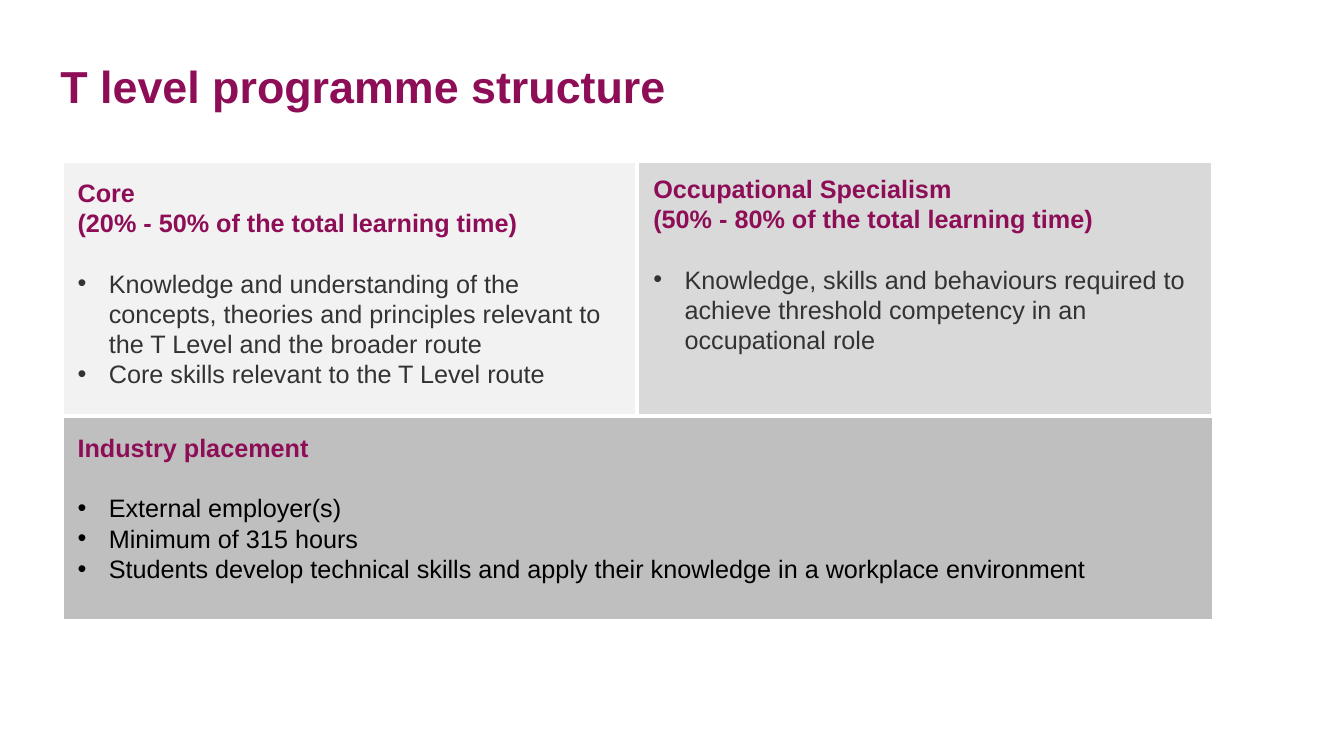
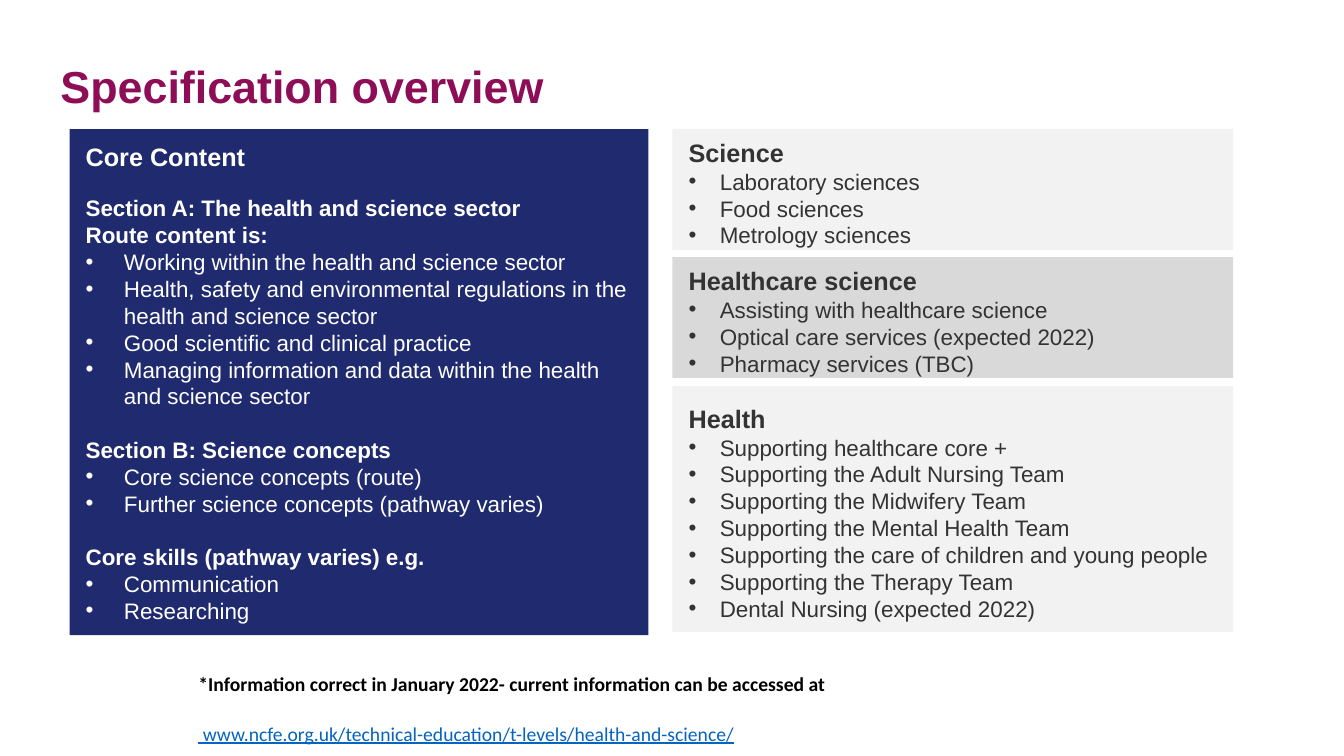
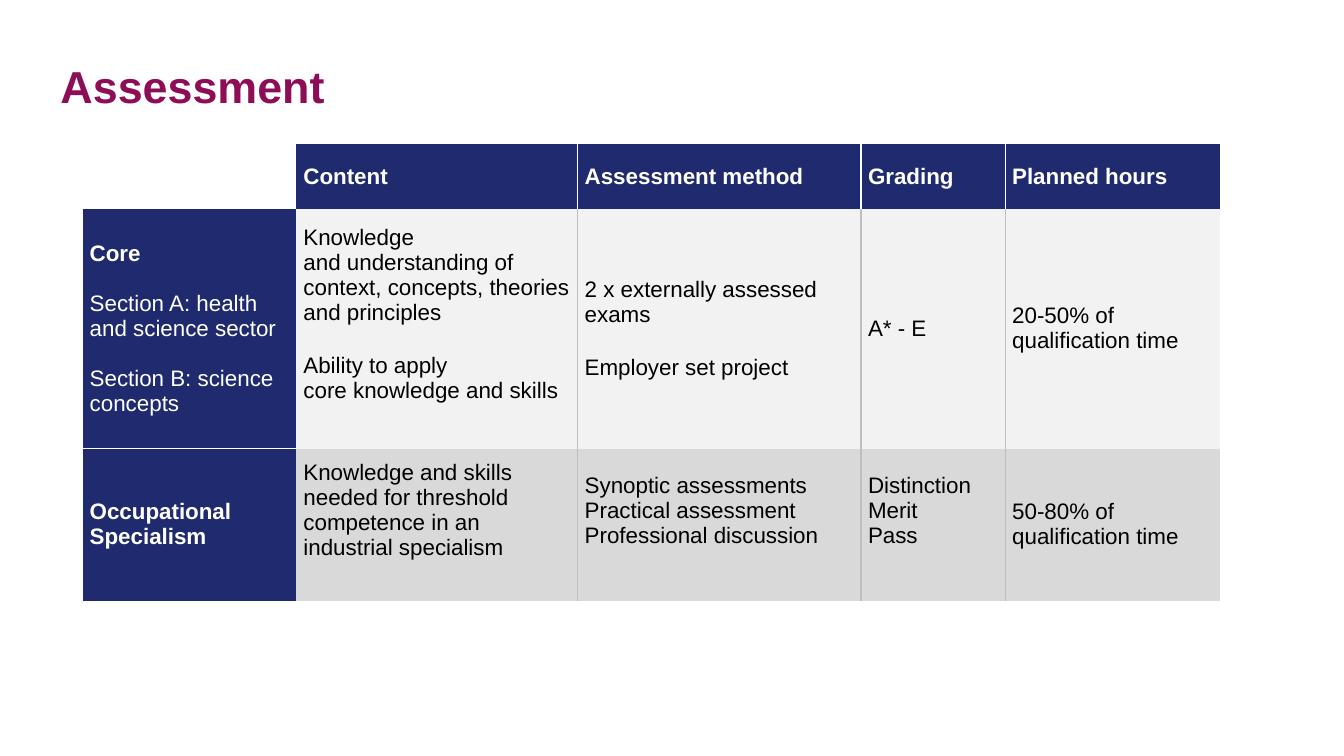
import pptx
import pptx.util
import pptx.dml.color
import pptx.enum.shapes
import pptx.enum.text
import pptx.oxml
import pptx.oxml.ns
from lxml import etree

Inches = pptx.util.Inches
Pt = pptx.util.Pt
RGBColor = pptx.dml.color.RGBColor
MSO_ANCHOR = pptx.enum.text.MSO_ANCHOR
qn = pptx.oxml.ns.qn

PLUM = RGBColor(0x8D, 0x0E, 0x57)
NAVY = RGBColor(0x20, 0x2B, 0x6F)
PALE = RGBColor(0xF2, 0xF2, 0xF2)
LIGHT = RGBColor(0xD9, 0xD9, 0xD9)
MID = RGBColor(0xBF, 0xBF, 0xBF)
DARK = RGBColor(0x33, 0x33, 0x33)
BLACK = RGBColor(0, 0, 0)
WHITE = RGBColor(0xFF, 0xFF, 0xFF)
LINK = RGBColor(0x05, 0x63, 0xC1)
NO_GRID = "{2D5ABB26-0587-4C30-8999-92F81FD0307C}"
NBSP = chr(160)


def add_text(tf, text, size=16, color=BLACK, bold=False, underline=None,
             font="Arial", spacing=1.0, gap=0, indent=0):
    p = tf.paragraphs[0]
    if p.runs:
        p = tf.add_paragraph()
    p.alignment = pptx.enum.text.PP_ALIGN.LEFT
    p.line_spacing = spacing
    p.space_before = Pt(gap)
    if indent:
        pPr = p._p.get_or_add_pPr()
        pPr.set("marL", str(Inches(indent)))
        pPr.set("indent", str(-Inches(indent)))
        etree.SubElement(pPr, qn("a:buFont"), typeface="Arial")
        etree.SubElement(pPr, qn("a:buChar"), char="•")
    r = p.add_run()
    r.text = text
    r.font.name = font
    r.font.size = Pt(size)
    r.font.bold = bold
    r.font.underline = underline
    r.font.color.rgb = color


def add_border(cell, side, color):
    ln = etree.Element(qn("a:" + side), w=str(Pt(1)))
    fill = etree.SubElement(ln, qn("a:solidFill"))
    etree.SubElement(fill, qn("a:srgbClr"), val=str(color))
    tcPr = cell._tc.get_or_add_tcPr()
    count = len(tcPr.findall(qn("a:lnL"))) + len(tcPr.findall(qn("a:lnR")))
    tcPr.insert(count, ln)


prs = pptx.Presentation()
prs.slide_width = Inches(13.33)
prs.slide_height = Inches(7.5)

slides = []
for title in ("T level programme structure", "Specification overview", "Assessment"):
    s = prs.slides.add_slide(prs.slide_layouts[5])
    sp = s.shapes.title
    sp.left, sp.top, sp.width, sp.height = map(Inches, (0.5, 0.25, 12.24, 0.92))
    sp.text_frame.auto_size = pptx.enum.text.MSO_AUTO_SIZE.NONE
    sp.text_frame.vertical_anchor = MSO_ANCHOR.BOTTOM
    add_text(sp.text_frame, title, size=32, color=PLUM, bold=True, spacing=0.9)
    slides.append(s)
structure, overview, assessment = slides

plum_head = dict(size=18, color=PLUM, bold=True)
dark_item = dict(size=18, color=DARK, indent=0.31)
dark_first = dict(dark_item, gap=21.5)
black_item = dict(size=18, indent=0.31)
black_first = dict(black_item, gap=21.5)
white_head = dict(size=18, color=WHITE, bold=True)
section = dict(color=WHITE, bold=True)
section_first = dict(section, gap=16.5)
section_next = dict(section, gap=19)
white_item = dict(color=WHITE, indent=0.38)
pathway_head = dict(size=18, color=DARK, bold=True)
pathway_item = dict(color=DARK, indent=0.31)

boxes = [
    (structure, (0.61, 1.6, 5.71, 2.63), PALE, 0.16, [
        ("Core", plum_head),
        ("(20% - 50% of the total learning time)", plum_head),
        ("Knowledge and understanding of the concepts, theories and principles "
         "relevant to the T Level and the broader route", dark_first),
        ("Core skills relevant to the T Level route", dark_item),
    ]),
    (structure, (6.32, 1.6, 5.71, 2.59), LIGHT, 0.12, [
        ("Occupational Specialism", plum_head),
        ("(50% - 80% of the total learning time)", plum_head),
        ("Knowledge, skills and behaviours required to achieve threshold "
         "competency in an occupational role", dark_first),
    ]),
    (structure, (0.61, 4.13, 11.43, 2.03), MID, 0.16, [
        ("Industry placement", plum_head),
        ("External employer(s)", black_first),
        ("Minimum of 315 hours", black_item),
        ("Students develop technical skills and apply their knowledge in a "
         "workplace environment", black_item),
    ]),
    (overview, (0.69, 1.28, 5.74, 5.02), NAVY, 0.12, [
        ("Core Content", white_head),
        ("Section A: The health and science sector", section_first),
        ("Route content is:", section),
        ("Working within the health and science sector", white_item),
        ("Health, safety and environmental regulations in the health and "
         "science sector", white_item),
        ("Good scientific and clinical practice", white_item),
        ("Managing information and data within the health and science sector",
         white_item),
        ("Section B: Science concepts", section_next),
        ("Core science concepts (route)", white_item),
        ("Further science concepts (pathway varies)", white_item),
        ("Core skills (pathway varies) e.g.", section_next),
        ("Communication", white_item),
        ("Researching", white_item),
    ]),
]

pathways = [
    ("Science", 1.28, 1.2, PALE,
     ["Laboratory sciences", "Food sciences", "Metrology sciences"]),
    ("Healthcare science", 2.55, 1.2, LIGHT,
     ["Assisting with healthcare science", "Optical care services (expected 2022)",
      "Pharmacy services (TBC)"]),
    ("Health", 3.83, 2.44, PALE,
     ["Supporting healthcare core +", "Supporting the Adult Nursing Team",
      "Supporting the Midwifery Team", "Supporting the Mental Health Team",
      "Supporting the care of children and young people",
      "Supporting the Therapy Team", "Dental Nursing (expected 2022)"]),
]
for name, top, height, fill, items in pathways:
    lines = [(name, pathway_head)] + [(item, pathway_item) for item in items]
    boxes.append((overview, (6.67, top, 5.56, height), fill, 0.12, lines))

for s, place, fill, inset, lines in boxes:
    sp = s.shapes.add_shape(pptx.enum.shapes.MSO_SHAPE.RECTANGLE, *map(Inches, place))
    sp.shadow.inherit = False
    sp.fill.solid()
    sp.fill.fore_color.rgb = fill
    if s is structure:
        sp.line.color.rgb = WHITE
        sp.line.width = Pt(3)
    else:
        sp.line.fill.background()
    tf = sp.text_frame
    tf.word_wrap = True
    tf.margin_left, tf.margin_top = Inches(0.16), Inches(inset)
    tf.margin_right, tf.margin_bottom = Inches(0.1), Inches(0.05)
    is_pathway = lines[0][1] is pathway_head
    tf.vertical_anchor = MSO_ANCHOR.MIDDLE if is_pathway else MSO_ANCHOR.TOP
    for text, style in lines:
        add_text(tf, text, **style)

sp = overview.shapes.add_textbox(*map(Inches, (1.87, 6.62, 6.43, 0.61)))
tf = sp.text_frame
tf.word_wrap = True
add_text(tf, "*Information correct in January 2022- current information can be accessed at",
         size=14, bold=True, font="Calibri")
add_text(tf, " www.ncfe.org.uk/technical-education/t-levels/health-and-science/",
         size=14, color=LINK, underline=True, font="Calibri", gap=18.5)

widths = [2.12, 2.79, 2.81, 1.43, 2.13]
heights = [0.64, 2.38, 1.51]
rows = [
    [[], ["Content"], ["Assessment method"], ["Grading"], ["Planned hours"]],
    [["Core", "Section A: health and science sector", "Section B: science concepts"],
     [f"Knowledge and{NBSP}understanding of context,{NBSP}concepts, "
      f"theories and{NBSP}principles",
      f"Ability to apply core{NBSP}knowledge and skills"],
     ["2 x externally assessed exams", "Employer set project"],
     ["A* - E"],
     [f"20-50% of qualification{NBSP}time"]],
    [["Occupational", "Specialism"],
     [f"Knowledge and skills needed{NBSP}for threshold competence "
      f"in{NBSP}an industrial specialism"],
     ["Synoptic assessments", "Practical assessment", "Professional discussion"],
     ["Distinction", "Merit", "Pass"],
     [f"50-80% of qualification{NBSP}time"]],
]
raised = [(1, 1), (2, 1), (2, 2), (2, 3)]
row_fills = [NAVY, PALE, LIGHT]

frame = assessment.shapes.add_table(3, 5, *map(Inches, (0.82, 1.43, 11.28, 4.53)))
table = frame.table
table._tbl.tblPr.find(qn("a:tableStyleId")).text = NO_GRID
for column, width in zip(table.columns, widths):
    column.width = Inches(width)
for row, height in zip(table.rows, heights):
    row.height = Inches(height)

for i, row in enumerate(rows):
    for j, lines in enumerate(row):
        cell = table.cell(i, j)
        is_header = i == 0 or j == 0
        cell.fill.solid()
        cell.fill.fore_color.rgb = NAVY if is_header else row_fills[i]
        if i == j == 0:
            cell.fill.fore_color.rgb = WHITE
        cell.vertical_anchor = MSO_ANCHOR.MIDDLE
        cell.margin_left = cell.margin_right = Inches(0.07)
        cell.margin_top = Inches(0.03)
        cell.margin_bottom = Inches(0.31 if (i, j) in raised else 0.03)
        for k, text in enumerate(lines):
            gap = 0
            if i == 1 and k > 0:
                gap = 18 if j == 0 else 20
            bold = i == 0 or (j == 0 and (i == 2 or k == 0))
            add_text(cell.text_frame, text, color=WHITE if is_header else BLACK,
                     bold=bold, gap=gap)
        rule = WHITE if i == 0 else MID
        if j > 1:
            add_border(cell, "lnL", rule)
        if 0 < j < 4:
            add_border(cell, "lnR", rule)

add_border(table.cell(1, 0), "lnB", WHITE)
add_border(table.cell(2, 0), "lnT", WHITE)

prs.save("out.pptx")
